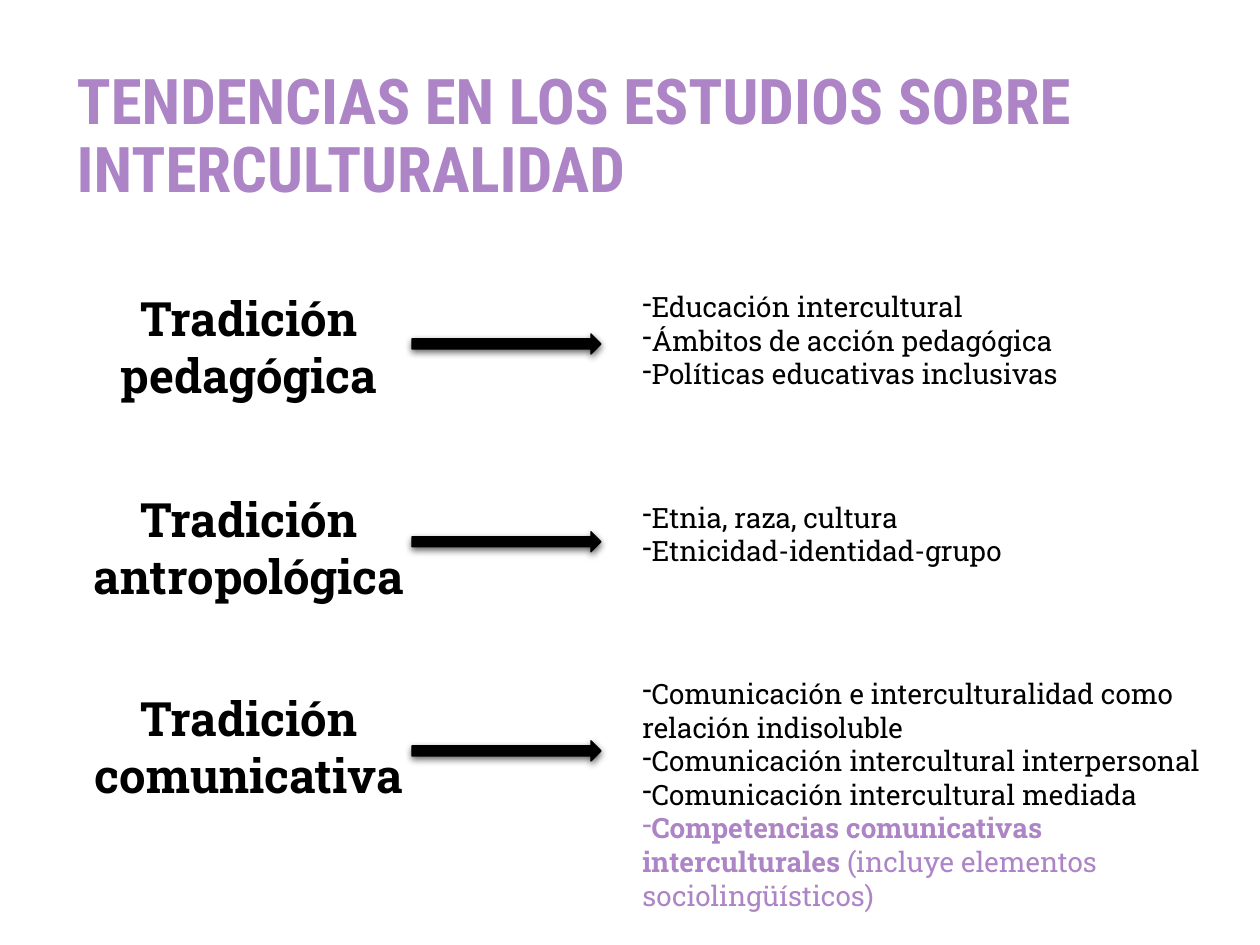
from dataclasses import dataclass

from lxml import etree
from pptx import Presentation
from pptx.dml.color import RGBColor
from pptx.enum.shapes import MSO_SHAPE
from pptx.enum.text import MSO_ANCHOR, PP_ALIGN
from pptx.oxml import parse_xml
from pptx.oxml.ns import nsdecls, qn
from pptx.util import Inches, Pt


@dataclass(frozen=True)
class Theme:
    black: RGBColor = RGBColor(0, 0, 0)
    accent: RGBColor = RGBColor(0xAD, 0x84, 0xC6)
    title_font: str = "Roboto Condensed"
    body_font: str = "Roboto Slab"
    title_size: Pt = Pt(36)
    label_size: Pt = Pt(27)
    body_size: Pt = Pt(16)


T = Theme()
TITLE = dict(name=T.title_font, size=T.title_size, bold=True, color=T.accent)
LABEL = dict(name=T.body_font, size=T.label_size, bold=True, color=T.black)
BODY = dict(name=T.body_font, size=T.body_size, bold=False, color=T.black)
NOTE = {**BODY, "color": T.accent}
KEY = {**NOTE, "bold": True}

# Label, label top, arrow top, list box (top, width, height), list items
TRADITIONS = [
    ("Tradición pedagógica", 2.25, 2.65, (2.25, 4.09, 0.91), [
        [("Educación intercultural", BODY)],
        [("Ámbitos de acción pedagógica", BODY)],
        [("Políticas educativas inclusivas", BODY)],
    ]),
    ("Tradición antropológica", 3.84, 4.22, (3.92, 4.09, 0.64), [
        [("Etnia, raza, cultura", BODY)],
        [("Etnicidad-identidad-grupo", BODY)],
    ]),
    ("Tradición comunicativa", 5.42, 5.88, (5.32, 4.72, 1.99), [
        [("Comunicación e interculturalidad como relación indisoluble", BODY)],
        [("Comunicación intercultural interpersonal", BODY)],
        [("Comunicación intercultural mediada", BODY)],
        [("Competencias comunicativas interculturales ", KEY),
         ("(incluye elementos sociolingüísticos)", NOTE)],
    ]),
]


def add_run(p, text, style):
    r = p.add_run()
    r.text = text
    for key, value in style.items():
        if key == "color":
            r.font.color.rgb = value
        else:
            setattr(r.font, key, value)


def add_text_frame(s, box):
    tf = s.shapes.add_textbox(*map(Inches, box)).text_frame
    tf.word_wrap = True
    return tf


def add_title(s, box, text):
    tf = add_text_frame(s, box)
    tf.vertical_anchor = MSO_ANCHOR.MIDDLE
    p = tf.paragraphs[0]
    p.line_spacing = 0.9
    add_run(p, text, TITLE)


def add_label(s, box, text):
    p = add_text_frame(s, box).paragraphs[0]
    p.alignment = PP_ALIGN.CENTER
    add_run(p, text, LABEL)


def add_list(s, box, items):
    """Dash list whose bullets sit directly against the text."""
    tf = add_text_frame(s, box)
    for i, runs in enumerate(items):
        p = tf.add_paragraph() if i else tf.paragraphs[0]
        pPr = p._p.get_or_add_pPr()
        pPr.set("marL", "0")
        pPr.set("indent", "0")
        etree.SubElement(pPr, qn("a:buChar"), char="-")
        for text, style in runs:
            add_run(p, text, style)


def add_arrow(s, box):
    sp = s.shapes.add_shape(MSO_SHAPE.RIGHT_ARROW, *map(Inches, box))
    sp.fill.solid()
    sp.fill.fore_color.rgb = T.black
    sp.line.color.rgb = T.black
    sp.line.width = Pt(0.75)
    sp._element.spPr.append(parse_xml(
        f'<a:effectLst {nsdecls("a")}>'
        f'<a:outerShdw blurRad="{Pt(4)}" dist="{Pt(1.5)}" dir="5400000" rotWithShape="0">'
        '<a:srgbClr val="000000"><a:alpha val="60000"/></a:srgbClr>'
        '</a:outerShdw></a:effectLst>'))


def main():
    prs = Presentation()
    prs.slide_width, prs.slide_height = Inches(10), Inches(7.5)
    s = prs.slides.add_slide(prs.slide_layouts[6])
    add_title(s, (0.51, 0.22, 9.21, 1.75),
              "TENDENCIAS EN LOS ESTUDIOS SOBRE INTERCULTURALIDAD")
    for label, label_top, arrow_top, list_box, items in TRADITIONS:
        add_label(s, (0.28, label_top, 3.39, 1.01), label)
        add_list(s, (5, *list_box), items)
        add_arrow(s, (3.27, arrow_top, 1.5, 0.16))
    prs.save("out.pptx")


if __name__ == "__main__":
    main()
